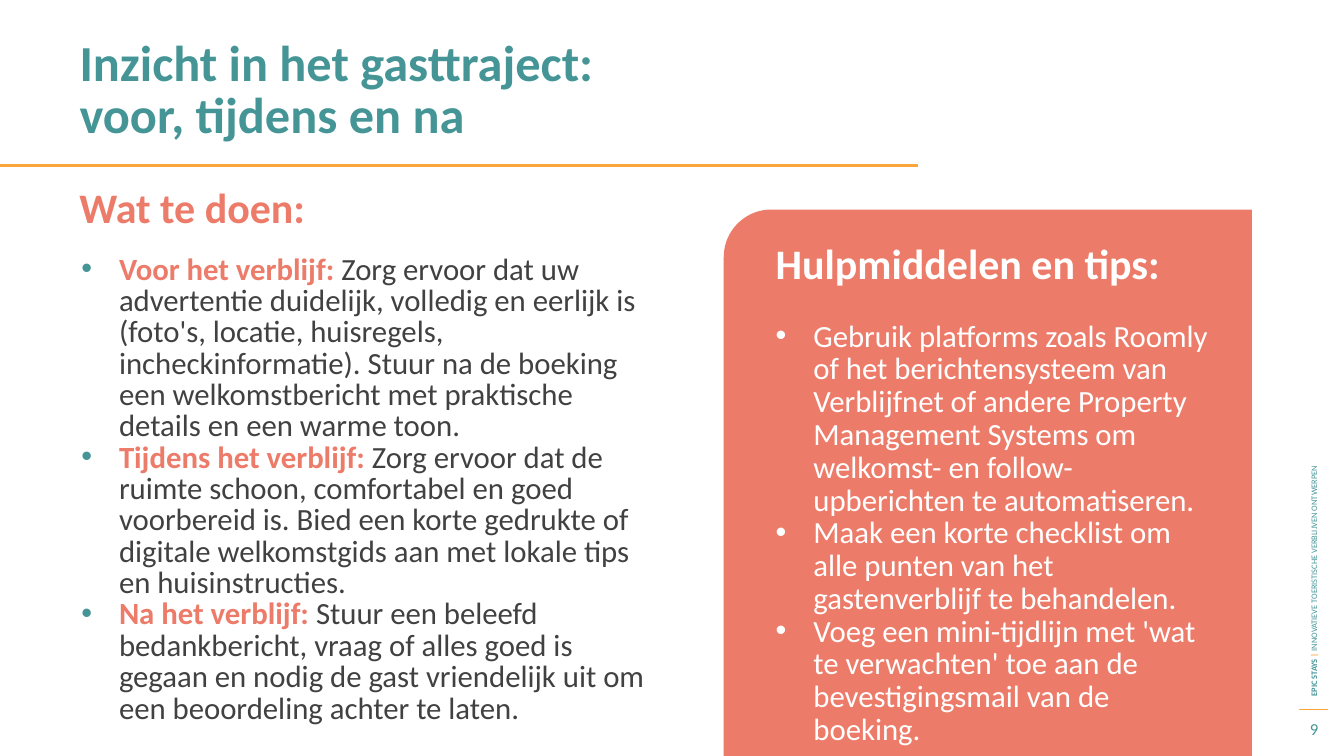
import pptx
import pptx.util
import pptx.dml.color
import pptx.enum.shapes
import pptx.enum.text
import pptx.oxml.ns
import lxml.etree

Cm, Pt = pptx.util.Cm, pptx.util.Pt
qn = pptx.oxml.ns.qn
anchor = pptx.enum.text.MSO_ANCHOR
align = pptx.enum.text.PP_ALIGN
hues = {"teal": "459597", "coral": "EC7C69", "gold": "FBA63B", "dark": "414141", "white": "FFFFFF"}


def rgb(hue):
    return pptx.dml.color.RGBColor.from_string(hues[hue])


def write(box, rows, size, lead=None, dot=None, first=True):
    frame = box.text_frame
    frame.word_wrap = True
    for row in rows:
        para = frame.paragraphs[0] if first else frame.add_paragraph()
        first = False
        para.alignment = align.LEFT
        if dot:
            props = para._p.get_or_add_pPr()
            props.set("marL", str(Cm(0.95)))
            props.set("indent", str(-Cm(0.95)))
            tint = lxml.etree.SubElement(props, qn("a:buClr"))
            lxml.etree.SubElement(tint, qn("a:srgbClr")).set("val", hues[dot])
            lxml.etree.SubElement(props, qn("a:buFont")).set("typeface", "Arial")
            lxml.etree.SubElement(props, qn("a:buChar")).set("char", "•")
        if lead:
            para.line_spacing = Pt(lead)
        for text, hue, bold in row:
            run = para.add_run()
            run.text = text
            run.font.name = "Calibri"
            run.font.size = Pt(size)
            run.font.bold = bold
            run.font.color.rgb = rgb(hue)


deck = pptx.Presentation()
deck.slide_width, deck.slide_height = Cm(33.87), Cm(19.05)
slide = deck.slides.add_slide(deck.slide_layouts[5])
shapes = slide.shapes

title = shapes.title
title.left, title.top, title.width, title.height = Cm(1.75), Cm(0.86), Cm(24.51), Cm(2.24)
title.text_frame.vertical_anchor = anchor.TOP
title.text_frame.auto_size = pptx.enum.text.MSO_AUTO_SIZE.NONE
write(title, [
    [("Inzicht in het gasttraject:", "teal", True)],
    [("voor, tijdens en na", "teal", True)],
], 36, 37.2)

for left, right, top, width in [(0, 23.14, 4.17, 1.5), (32.74, 33.48, 17.88, 0.75)]:
    line = shapes.add_connector(pptx.enum.shapes.MSO_CONNECTOR.STRAIGHT, Cm(left), Cm(top), Cm(right), Cm(top))
    line.line.color.rgb = rgb("gold")
    line.line.width = Pt(width)
    lxml.etree.SubElement(line._element.spPr, qn("a:effectLst"))

side = shapes.add_textbox(Cm(25.78), Cm(10.21), Cm(14.66), Cm(0.51))
side.rotation = 270
side.text_frame.vertical_anchor = anchor.MIDDLE
write(side, [[
    ("EPIC STAYS ", "teal", True),
    ("| ", "gold", True),
    ("INNOVATIEVE TOERISTISCHE VERBLIJVEN ONTWERPEN", "teal", False),
]], 6)

page = shapes.add_textbox(Cm(32.46), Cm(17.93), Cm(1.32), Cm(0.86))
page.text_frame.vertical_anchor = anchor.MIDDLE
write(page, [[("9", "teal", False)]], 12)
page.text_frame.paragraphs[0].alignment = align.CENTER

head = shapes.add_textbox(Cm(1.75), Cm(4.7), Cm(15.6), Cm(2.24))
write(head, [[("Wat te doen:", "coral", True)]], 30, 29)

steps = [
    ("Voor het verblijf: ", "Zorg ervoor dat uw advertentie duidelijk, volledig en eerlijk is (foto's, locatie, huisregels, incheckinformatie). Stuur na de boeking een welkomstbericht met praktische details en een warme toon."),
    ("Tijdens het verblijf: ", "Zorg ervoor dat de ruimte schoon, comfortabel en goed voorbereid is. Bied een korte gedrukte of digitale welkomstgids aan met lokale tips en huisinstructies."),
    ("Na het verblijf: ", "Stuur een beleefd bedankbericht, vraag of alles goed is gegaan en nodig de gast vriendelijk uit om een beoordeling achter te laten."),
]
body = shapes.add_textbox(Cm(1.8), Cm(6.3), Cm(15.11), Cm(10.16))
write(body, [[(when, "coral", True), (what, "dark", False)] for when, what in steps], 22, 22.4, "teal")

wide, high = 13.31, 13.77
panel = shapes.add_shape(
    pptx.enum.shapes.MSO_SHAPE.ROUND_1_RECTANGLE,
    Cm(18.24 + (wide - high) / 2), Cm(5.28 + (high - wide) / 2), Cm(high), Cm(wide))
panel.rotation = 270
panel.adjustments[0] = 0.09
panel.shadow.inherit = False
panel.fill.solid()
panel.fill.fore_color.rgb = rgb("coral")
panel.line.fill.background()

tips = [
    "Gebruik platforms zoals Roomly of het berichtensysteem van Verblijfnet of andere Property Management Systems om welkomst- en follow-upberichten te automatiseren.",
    "Maak een korte checklist om alle punten van het gastenverblijf te behandelen.",
    "Voeg een mini-tijdlijn met 'wat te verwachten' toe aan de bevestigingsmail van de boeking.",
]
aside = shapes.add_textbox(Cm(19.3), Cm(6.3), Cm(11.4), Cm(9.12))
write(aside, [[("Hulpmiddelen en tips:", "white", True)]], 30, 23.4)
write(aside, [[(tip, "white", False)] for tip in tips], 22, 23.4, "white", False)
aside.text_frame.paragraphs[1].space_before = Pt(23.4)

deck.save("out.pptx")
